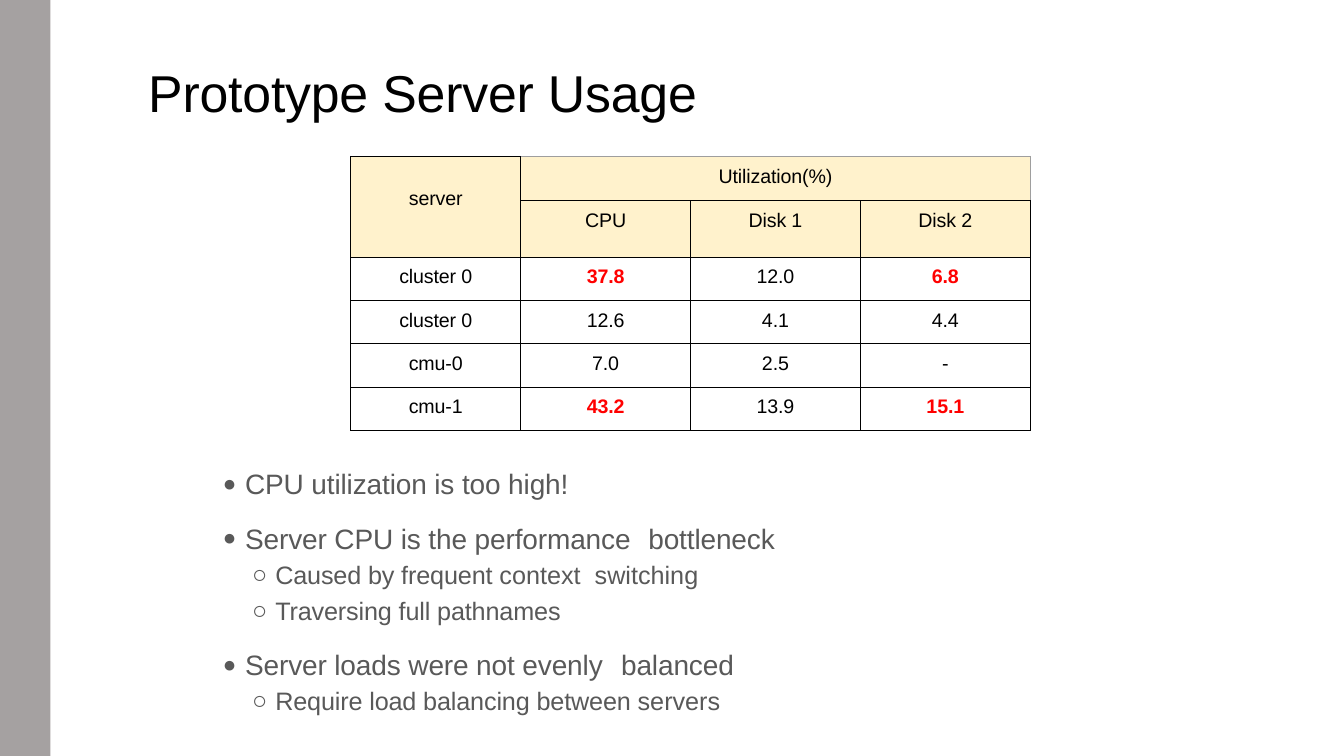
from dataclasses import dataclass
from lxml import etree
from pptx import Presentation
from pptx.dml.color import RGBColor
from pptx.enum.shapes import MSO_SHAPE
from pptx.enum.text import PP_ALIGN
from pptx.oxml.ns import qn
from pptx.slide import Slide
from pptx.table import _Cell
from pptx.text.text import TextFrame, _Paragraph
from pptx.util import Inches, Pt

RECT = MSO_SHAPE.RECTANGLE
CENTER = PP_ALIGN.CENTER
FONT = "Arial"
COLORS = {
    "band": "A5A1A1", "ink": "000000", "body": "595959", "head": "FFF2CC",
    "plain": "FFFFFF", "alert": "FF0000", "edge": "9E9E9E",
}


@dataclass(frozen=True)
class Span:
    text: str
    track: float = -0.1


@dataclass(frozen=True)
class Level:
    mark: str
    scale: int
    size: int
    left: float
    hang: float


@dataclass(frozen=True)
class Point:
    level: Level
    before: float
    spans: tuple[Span, ...]
    stop: float | None = None


MAIN = Level("●", 80, 20, 0.24, 0.22)
SUB = Level("○", 100, 18, 0.54, 0.23)
POINTS = [
    Point(MAIN, 1, (Span("CPU utilization is too high!"),)),
    Point(MAIN, 15, (Span("Server CPU is the performance\tbottleneck"),), 4.24),
    Point(SUB, 3.3, (Span("Caused by frequent "), Span("context", 0),
                     Span(" ", 5), Span("switching", 0))),
    Point(SUB, 4.2, (Span("Traversing full pathnames"),)),
    Point(MAIN, 15.6, (Span("Server loads were not evenly\tbalanced"),), 3.97),
    Point(SUB, 3, (Span("Require load balancing between "), Span("servers", 0))),
]
HEADS = ["CPU", "Disk 1", "Disk 2"]
USAGE = [
    ["cluster 0", "37.8", "12.0", "6.8"],
    ["cluster 0", "12.6", "4.1", "4.4"],
    ["cmu-0", "7.0", "2.5", "-"],
    ["cmu-1", "43.2", "13.9", "15.1"],
]
ALERTS = {"37.8", "6.8", "43.2", "15.1"}
ROWS = [0.44, 0.56, 0.43, 0.43, 0.43, 0.43]


def rgb(name: str) -> RGBColor:
    return RGBColor.from_string(COLORS[name])


def add_run(para: _Paragraph, span: Span, size: float, color: str, bold: bool = False) -> None:
    run = para.add_run()
    run.text = span.text
    font = run.font
    font.name, font.size, font.bold = FONT, Pt(size), bold
    font.color.rgb = rgb(color)
    run._r.get_or_add_rPr().set("spc", str(round(span.track * 100)))


def add_box(slide: Slide, left: float, top: float, width: float, height: float) -> TextFrame:
    box = slide.shapes.add_textbox(Inches(left), Inches(top), Inches(width), Inches(height))
    frame = box.text_frame
    frame.word_wrap = True
    frame.margin_left = frame.margin_right = frame.margin_bottom = 0
    frame.margin_top = Inches(0.01)
    return frame


def add_point(para: _Paragraph, point: Point) -> None:
    level = point.level
    para.space_before = Pt(point.before)
    props = para._p.get_or_add_pPr()
    props.set("marL", str(Inches(level.left)))
    props.set("indent", str(-Inches(level.hang)))
    etree.SubElement(props, qn("a:buSzPct"), val=str(level.scale * 1000))
    etree.SubElement(props, qn("a:buFont"), typeface=FONT)
    etree.SubElement(props, qn("a:buChar"), char=level.mark)
    stops = etree.SubElement(props, qn("a:tabLst"))
    for stop in (level.left, point.stop):
        if stop is not None:
            etree.SubElement(stops, qn("a:tab"), pos=str(Inches(stop)), algn="l")
    for span in point.spans:
        add_run(para, span, level.size, "body")


def set_edges(cell: _Cell, outer: str) -> None:
    props = cell._tc.get_or_add_tcPr()
    sides = {"lnL": "ink", "lnR": outer, "lnT": outer, "lnB": "ink"}
    for spot, (side, color) in enumerate(sides.items()):
        line = etree.Element(qn(f"a:{side}"), w=str(Pt(0.75)))
        fill = etree.SubElement(line, qn("a:solidFill"))
        etree.SubElement(fill, qn("a:srgbClr"), val=COLORS[color])
        props.insert(spot, line)


def fill_cell(cell: _Cell, text: str, fill: str, top: float = 0.09, outer: str = "ink") -> None:
    cell.fill.solid()
    cell.fill.fore_color.rgb = rgb(fill)
    cell.margin_left = cell.margin_right = cell.margin_bottom = 0
    cell.margin_top = Inches(top)
    set_edges(cell, outer)
    if text:
        para = cell.text_frame.paragraphs[0]
        para.alignment = CENTER
        alert = text in ALERTS
        add_run(para, Span(text), 14, "alert" if alert else "ink", alert)


def add_usage(slide: Slide) -> None:
    width = 6.74
    frame = slide.shapes.add_table(len(ROWS), 4, Inches(3.48), Inches(1.55),
                                   Inches(width), Inches(sum(ROWS)))
    table = frame.table
    table.first_row = table.horz_banding = False
    for col in table.columns:
        col.width = Inches(width / 4)
    for row, height in zip(table.rows, ROWS):
        row.height = Inches(height)
    table.cell(0, 0).merge(table.cell(1, 0))
    table.cell(0, 1).merge(table.cell(0, 3))
    fill_cell(table.cell(0, 0), "server", "head", top=0.31)
    for col, text in enumerate(["Utilization(%)", "", ""], 1):
        fill_cell(table.cell(0, col), text, "head", outer="edge")
    for row, texts in enumerate([["", *HEADS], *USAGE], 1):
        for col, text in enumerate(texts):
            fill_cell(table.cell(row, col), text, "head" if row == 1 else "plain")


def main() -> None:
    deck = Presentation()
    deck.slide_width, deck.slide_height = Inches(13.33), Inches(7.5)
    slide = deck.slides.add_slide(deck.slide_layouts[6])
    band = slide.shapes.add_shape(RECT, 0, 0, Inches(0.5), Inches(7.5))
    band.shadow.inherit = False
    band.fill.solid()
    band.fill.fore_color.rgb = rgb("band")
    band.line.fill.background()

    title = add_box(slide, 1.47, 0.59, 5.5, 0.64).paragraphs[0]
    title.space_before = Pt(1)
    add_run(title, Span("Prototype Server Usage"), 37, "ink")
    add_usage(slide)
    body = add_box(slide, 2.19, 4.62, 5.52, 2.5)
    for spot, point in enumerate(POINTS):
        para = body.add_paragraph() if spot else body.paragraphs[0]
        add_point(para, point)
    deck.save("out.pptx")


if __name__ == "__main__":
    main()
